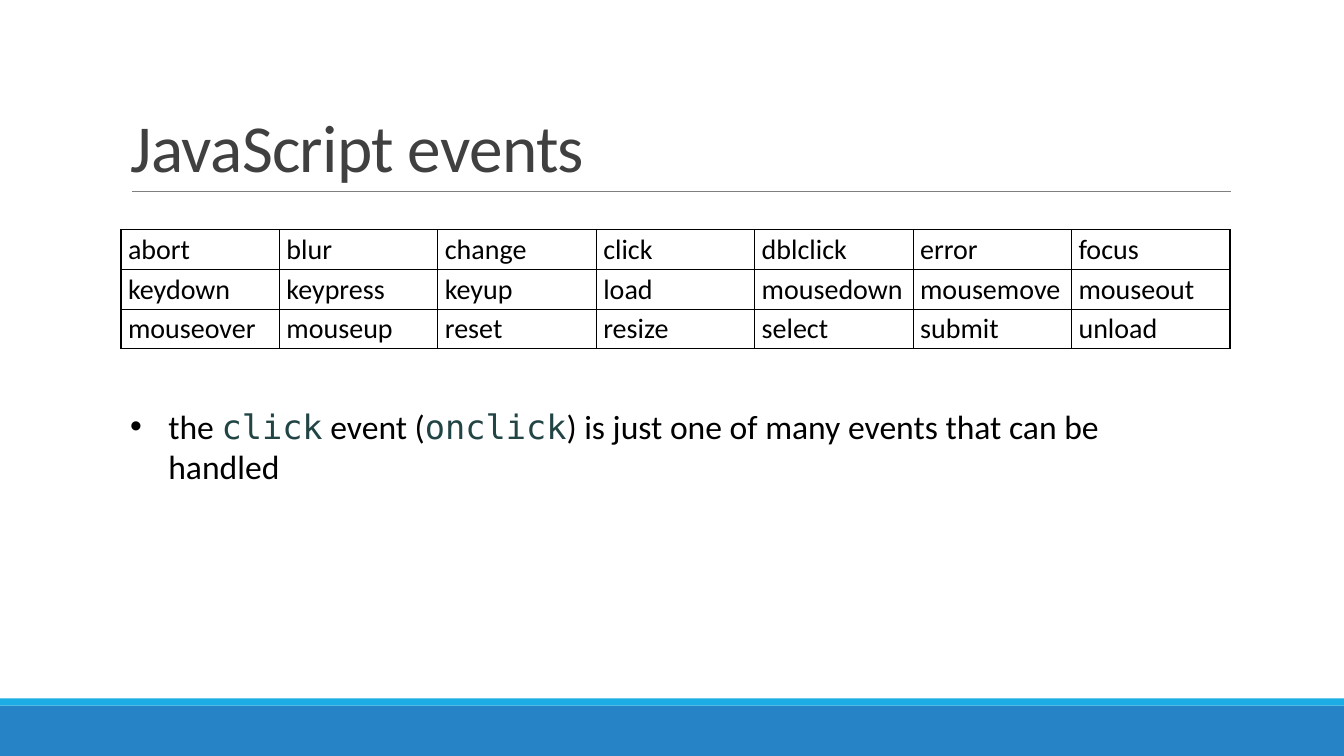
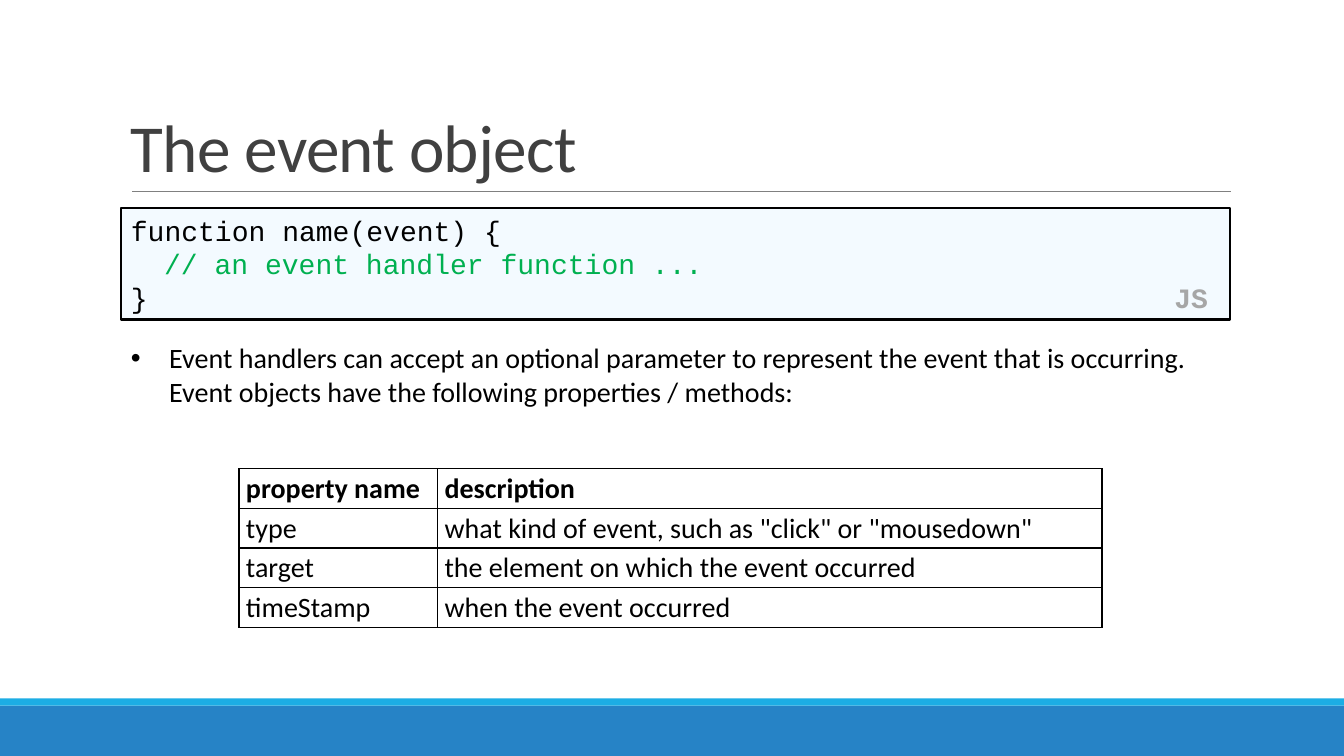
from lxml.etree import SubElement
from pptx import Presentation
from pptx.dml.color import RGBColor
from pptx.enum.shapes import MSO_CONNECTOR, MSO_SHAPE
from pptx.enum.text import MSO_ANCHOR, PP_ALIGN
from pptx.oxml import parse_xml
from pptx.oxml.ns import nsdecls, qn
from pptx.util import Inches, Pt

COLORS = {
    "band": "2683C6", "stripe": "1CADE4", "rule": "808080", "title": "404040",
    "text": "000000", "code": "224444", "code_box": "F3FAFF",
    "comment": "00B050", "label": "A6A6A6",
}
BODY, MONO, INLINE = "Calibri", "Courier New", "DejaVu Sans Mono"
SLIDE_WIDTH, SLIDE_HEIGHT = 13.33, 7.5
LEFT, WIDTH = 1.2, 11
ROW_HEIGHT = 0.39
BULLET_INDENT = 0.38
CODE_INDENT = 0.33

EVENTS = [
    ["abort", "blur", "change", "click", "dblclick", "error", "focus"],
    ["keydown", "keypress", "keyup", "load", "mousedown", "mousemove", "mouseout"],
    ["mouseover", "mouseup", "reset", "resize", "select", "submit", "unload"],
]
CLICK_NOTE = [
    ("the ", BODY, "text"),
    ("click", INLINE, "code"),
    (" event (", BODY, "text"),
    ("onclick", INLINE, "code"),
    (") is just one of many events that can be handled", BODY, "text"),
]
HANDLER_CODE = [  # text, colour, indent level
    ("function name(event) {", "text", 0),
    ("// an event handler function ...", "comment", 1),
    ("}", "text", 0),
]
HANDLER_NOTE = [(
    "Event handlers can accept an optional parameter to represent the event that is "
    "occurring. Event objects have the following properties / methods:", BODY, "text",
)]
PROPERTIES = [
    ["property name", "description"],
    ["type", 'what kind of event, such as "click" or "mousedown"'],
    ["target", "the element on which the event occurred"],
    ["timeStamp", "when the event occurred"],
]


def rgb(name):
    return RGBColor.from_string(COLORS[name])


def add_run(paragraph, text, size=20, font=BODY, color="text", bold=False):
    run = paragraph.add_run()
    run.text = text
    run.font.size, run.font.name, run.font.bold = Pt(size), font, bold
    run.font.color.rgb = rgb(color)
    return run


def add_text_box(slide, left, top, width, height, anchor=MSO_ANCHOR.TOP):
    box = slide.shapes.add_textbox(Inches(left), Inches(top), Inches(width), Inches(height))
    box.text_frame.word_wrap = True
    box.text_frame.vertical_anchor = anchor
    return box.text_frame


def add_box(slide, left, top, width, height, fill):
    box = slide.shapes.add_shape(MSO_SHAPE.RECTANGLE, Inches(left), Inches(top),
                                 Inches(width), Inches(height))
    box.shadow.inherit = False
    box.fill.solid()
    box.fill.fore_color.rgb = rgb(fill)
    box.line.fill.background()
    return box


def add_slide(presentation, title):
    """Add a slide with the shared bands, title and title rule."""
    slide = presentation.slides.add_slide(presentation.slide_layouts[6])
    add_box(slide, 0, 7, SLIDE_WIDTH, 0.5, "band")
    add_box(slide, 0, 6.93, SLIDE_WIDTH, 0.07, "stripe")
    rule = slide.shapes.add_connector(MSO_CONNECTOR.STRAIGHT, Inches(1.31), Inches(1.9),
                                      Inches(12.21), Inches(1.9))
    rule.line.color.rgb = rgb("rule")
    rule.line.width = Pt(0.5)
    SubElement(rule._element.spPr, qn("a:effectLst"))
    paragraph = add_text_box(slide, LEFT, 0.31, WIDTH, 1.59, MSO_ANCHOR.BOTTOM).paragraphs[0]
    paragraph.line_spacing = 0.85
    run = add_run(paragraph, title, 48, color="title")
    run.font._element.set("spc", "-50")
    return slide


def add_bullet(frame, runs, size):
    paragraph = frame.paragraphs[0]
    properties = paragraph._p.get_or_add_pPr()
    properties.set("marL", str(Inches(BULLET_INDENT)))
    properties.set("indent", str(-Inches(BULLET_INDENT)))
    SubElement(properties, qn("a:buFont"), typeface="Arial")
    SubElement(properties, qn("a:buChar"), char="•")
    for text, font, color in runs:
        add_run(paragraph, text, size, font, color)


def add_borders(cell):
    properties = cell._tc.get_or_add_tcPr()
    for position, side in enumerate(("lnL", "lnR", "lnT", "lnB")):
        properties.insert(position, parse_xml(
            f'<a:{side} {nsdecls("a")} w="{Pt(1)}"><a:solidFill>'
            f'<a:srgbClr val="{COLORS["text"]}"/></a:solidFill></a:{side}>'))


def add_grid(slide, rows, left, top, column_widths, header=False):
    table = slide.shapes.add_table(
        len(rows), len(column_widths), Inches(left), Inches(top),
        Inches(sum(column_widths)), Inches(ROW_HEIGHT * len(rows))).table
    table.first_row = header
    table.horz_banding = False
    for column, width in zip(table.columns, column_widths):
        column.width = Inches(width)
    for row_index, row in enumerate(rows):
        table.rows[row_index].height = Inches(ROW_HEIGHT)
        for column_index, text in enumerate(row):
            cell = table.cell(row_index, column_index)
            cell.margin_left = cell.margin_right = Inches(0.07)
            cell.margin_top = cell.margin_bottom = Inches(0.03)
            cell.fill.background()
            add_borders(cell)
            add_run(cell.text_frame.paragraphs[0], text, bold=header and row_index == 0)


def add_code(slide, lines, label, top, height):
    box = add_box(slide, LEFT, top, WIDTH, height, "code_box")
    box.line.color.rgb = rgb("text")
    box.line.width = Pt(1.5)
    frame = box.text_frame
    frame.word_wrap = True
    for index, (text, color, level) in enumerate(lines):
        paragraph = frame.add_paragraph() if index else frame.paragraphs[0]
        paragraph.alignment = PP_ALIGN.LEFT
        paragraph._p.get_or_add_pPr().set("marL", str(Inches(CODE_INDENT * level)))
        add_run(paragraph, text, font=MONO, color=color)
    label_height = 0.41
    corner = add_text_box(slide, 11.08, top + height - label_height, 1, label_height,
                          MSO_ANCHOR.BOTTOM)
    corner.paragraphs[0].alignment = PP_ALIGN.RIGHT
    add_run(corner.paragraphs[0], label, font=MONO, color="label", bold=True)


def build_events(presentation):
    slide = add_slide(presentation, "JavaScript events")
    columns = len(EVENTS[0])
    add_grid(slide, EVENTS, LEFT, 2.28, [WIDTH / columns] * columns)
    frame = add_text_box(slide, LEFT, 3.82, 10.77, 1.34, MSO_ANCHOR.MIDDLE)
    frame.margin_left, frame.margin_right = Inches(0.09), 0
    frame.margin_top, frame.margin_bottom = 0, Inches(0.13)
    add_bullet(frame, CLICK_NOTE, 24)


def build_event_object(presentation):
    slide = add_slide(presentation, "The event object")
    add_code(slide, HANDLER_CODE, "JS", 2.06, 1.11)
    add_bullet(add_text_box(slide, LEFT, 3.33, WIDTH, 0.77), HANDLER_NOTE, 20)
    add_grid(slide, PROPERTIES, 2.37, 4.65, [1.97, 6.59], header=True)


def main():
    presentation = Presentation()
    presentation.slide_width = Inches(SLIDE_WIDTH)
    presentation.slide_height = Inches(SLIDE_HEIGHT)
    build_events(presentation)
    build_event_object(presentation)
    presentation.save("out.pptx")


if __name__ == "__main__":
    main()
